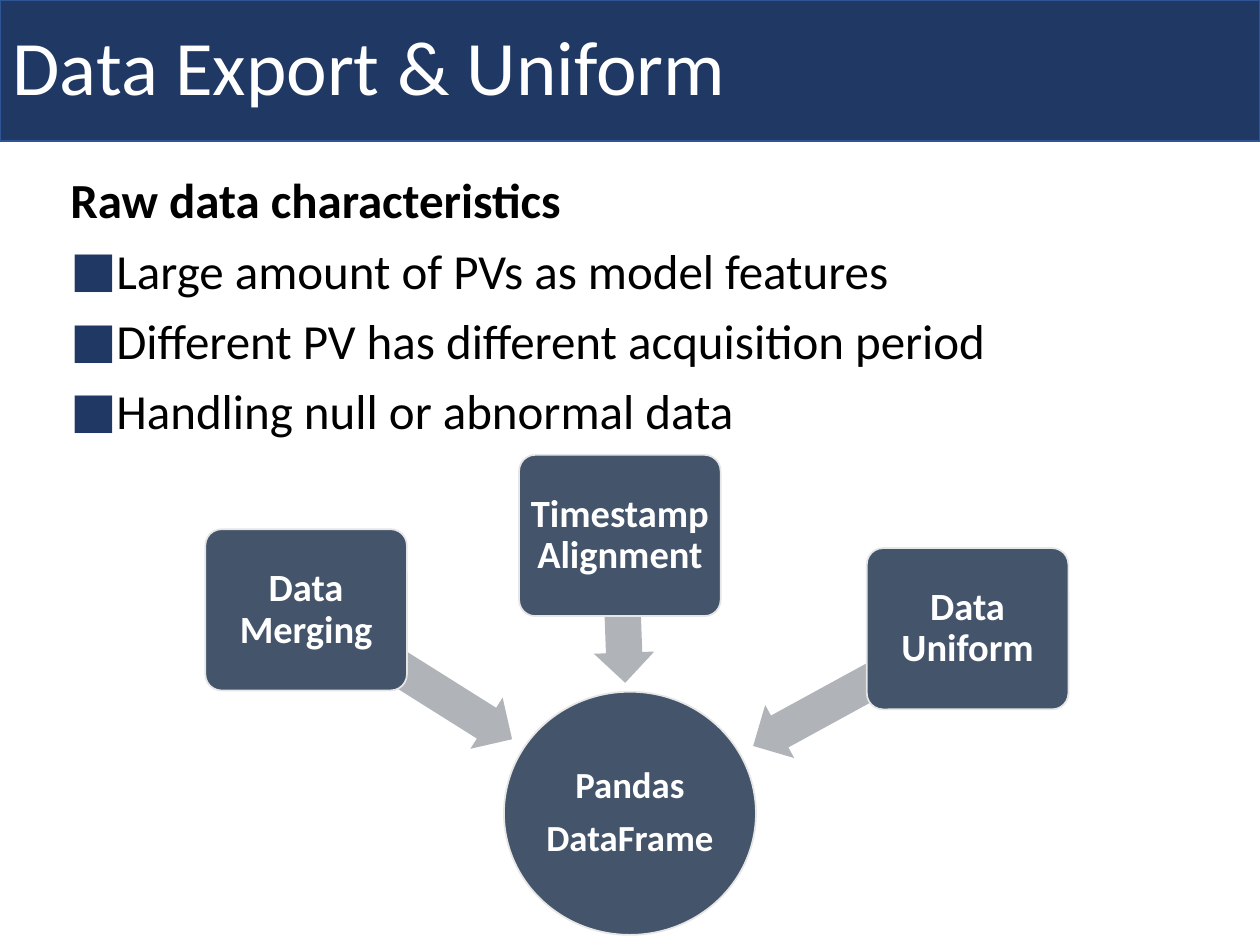
from math import atan2, cos, degrees, sin

from lxml import etree
from pptx import Presentation
from pptx.dml.color import RGBColor
from pptx.enum.shapes import MSO_SHAPE
from pptx.enum.text import MSO_ANCHOR, MSO_AUTO_SIZE, PP_ALIGN
from pptx.oxml.ns import qn
from pptx.util import Pt

ARROW, BOX, CIRCLE = MSO_SHAPE.LEFT_ARROW, MSO_SHAPE.ROUNDED_RECTANGLE, MSO_SHAPE.OVAL
LEFT, CENTER = PP_ALIGN.LEFT, PP_ALIGN.CENTER
MIDDLE, NO_FIT = MSO_ANCHOR.MIDDLE, MSO_AUTO_SIZE.NONE

FONT = "Calibri"
NAVY, NAVY_EDGE, SLATE, EDGE, GRAY = "203864", "2F5597", "44546A", "E7E6E6", "B0B4B9"
WHITE, BLACK = "FFFFFF", "000000"

TITLE = "Data Export & Uniform"
HEADING = "Raw data characteristics"
BULLETS = [
    "Large amount of PVs as model features",
    "Different PV has different acquisition period",
    "Handling null or abnormal data",
]
RESULT = ["Pandas", "DataFrame"]
RESULT_AREA = (288, 395.28, 144, 138.96)
STEPS = [
    {"text": "Data Merging", "left": 117.36, "top": 302.4, "arrow": 138.96},
    {"text": "Timestamp Alignment", "left": 296.64, "top": 259.92, "arrow": 84.24},
    {"text": "Data Uniform", "left": 495.36, "top": 313.2, "arrow": 139.68},
]
STEP_WIDTH, STEP_HEIGHT, ARROW_HEIGHT = 115.2, 92.16, 34.56


def color(value):
    return RGBColor.from_string(value)


def paint(shape, fill, line=None, width=1):
    shape.fill.solid()
    shape.fill.fore_color.rgb = color(fill)
    if line:
        shape.line.color.rgb = color(line)
        shape.line.width = Pt(width)
    else:
        shape.line.fill.background()


def add_bullet(paragraph):
    properties = paragraph._p.get_or_add_pPr()
    properties.set("marL", str(Pt(18)))
    properties.set("indent", str(-Pt(18)))
    bullet_color = etree.SubElement(properties, qn("a:buClr"))
    etree.SubElement(bullet_color, qn("a:srgbClr"), val=NAVY)
    etree.SubElement(properties, qn("a:buFont"), typeface=FONT)
    etree.SubElement(properties, qn("a:buChar"), char="■")


def write(shape, lines, size, text_color, bold=False, align=LEFT, before=0, after=0, bulleted=False):
    """Fill a shape with one paragraph per line; bullets follow an unbulleted bold heading."""
    frame = shape.text_frame
    frame.word_wrap = True
    frame.auto_size = NO_FIT
    for index, line in enumerate(lines):
        paragraph = frame.paragraphs[0] if index == 0 else frame.add_paragraph()
        paragraph.alignment = align
        paragraph.line_spacing = 0.9
        paragraph.space_before = Pt(before if index else 0)
        paragraph.space_after = Pt(after if index < len(lines) - 1 else 0)
        if bulleted and index:
            add_bullet(paragraph)
        run = paragraph.add_run()
        run.text = line
        run.font.name = FONT
        run.font.size = Pt(size)
        run.font.bold = bold or (bulleted and index == 0)
        run.font.color.rgb = color(text_color)


def add_shape(slide, kind, left, top, width, height, fill, line=None):
    shape = slide.shapes.add_shape(kind, Pt(left), Pt(top), Pt(width), Pt(height))
    shape.shadow.inherit = False
    paint(shape, fill, line)
    return shape


def set_margins(shape, margin):
    frame = shape.text_frame
    frame.vertical_anchor = MIDDLE
    frame.margin_left = frame.margin_right = Pt(margin)
    frame.margin_top = frame.margin_bottom = Pt(margin)


def add_step(slide, step):
    """Draw an arrow from the step's centre towards the result, then the step over it."""
    left, top, width, height = RESULT_AREA
    start_x = step["left"] + STEP_WIDTH / 2
    start_y = step["top"] + STEP_HEIGHT / 2
    angle = atan2(top + height / 2 - start_y, left + width / 2 - start_x)
    length = step["arrow"]
    middle_x = start_x + length / 2 * cos(angle)
    middle_y = start_y + length / 2 * sin(angle)
    arrow = add_shape(slide, ARROW, middle_x - length / 2, middle_y - ARROW_HEIGHT / 2,
                      length, ARROW_HEIGHT, GRAY)
    arrow.adjustments[0] = 0.6
    arrow.adjustments[1] = 0.5
    arrow.rotation = degrees(angle) + 180
    box = add_shape(slide, BOX, step["left"], step["top"], STEP_WIDTH, STEP_HEIGHT, SLATE, EDGE)
    box.adjustments[0] = 0.1
    set_margins(box, 3.6)
    write(box, [step["text"]], 22, WHITE, bold=True, align=CENTER)


def main():
    presentation = Presentation()
    presentation.slide_width, presentation.slide_height = Pt(720), Pt(540)
    slide = presentation.slides.add_slide(presentation.slide_layouts[5])

    title = slide.shapes.title
    title.left, title.top, title.width, title.height = Pt(0), Pt(0), Pt(720), Pt(80.64)
    paint(title, NAVY, NAVY_EDGE, 0.75)
    title.text_frame.vertical_anchor = MIDDLE
    write(title, [TITLE], 44, WHITE)

    body = slide.shapes.add_textbox(Pt(33.12), Pt(97.2), Pt(655.2), Pt(163.44))
    write(body, [HEADING] + BULLETS, 28, BLACK, before=10, bulleted=True)

    result = add_shape(slide, CIRCLE, *RESULT_AREA, SLATE, EDGE)
    set_margins(result, 1)
    write(result, RESULT, 21, WHITE, bold=True, align=CENTER, after=7.35)

    for step in STEPS:
        add_step(slide, step)
    presentation.save("out.pptx")


if __name__ == "__main__":
    main()
